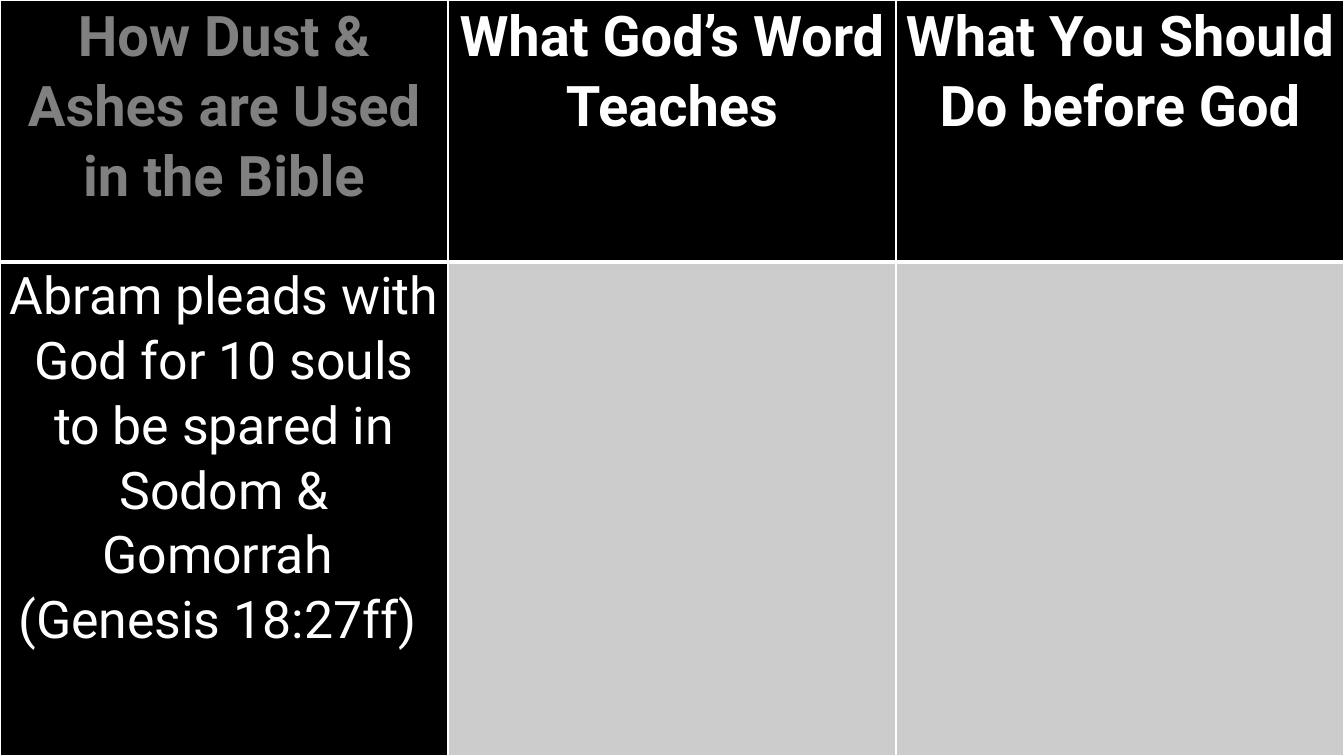
from dataclasses import dataclass

from lxml import etree
from pptx import Presentation
from pptx.dml.color import RGBColor
from pptx.enum.text import PP_ALIGN
from pptx.oxml.ns import qn
from pptx.util import Pt

CENTER = PP_ALIGN.CENTER
EMU_PER_INCH = 914400
PX_PER_INCH = 100.8
SLIDE_WIDTH, SLIDE_HEIGHT = 1344, 756
COLUMN_COUNT = 3
ROW_HEIGHTS = (262, 494)
SIDE_MARGIN = 7

HEADERS = (
    ["How Dust & Ashes are Used in the Bible"],
    ["What God’s Word ", "Teaches"],
    ["What You Should Do before God"],
)
EXAMPLE = [
    "Abram pleads with God for 10 souls to be spared in Sodom & Gomorrah ",
    "(Genesis 18:27ff) ",
]


@dataclass(frozen=True)
class Theme:
    """Colours, type sizes and line widths of the slide."""

    font: str = "Roboto"
    black: str = "000000"
    white: str = "FFFFFF"
    muted: str = "808080"
    empty: str = "CCCCCC"
    header_size: int = 40
    body_size: int = 37
    line_spacing: float = 1.07
    thin: int = 1
    thick: int = 3


THEME = Theme()


def px(length):
    """Turn pixels into EMU."""
    return round(length * EMU_PER_INCH / PX_PER_INCH)


def set_borders(cell, bottom_width):
    """Draw white lines on all four sides of a cell."""
    properties = cell._tc.get_or_add_tcPr()
    sides = ("a:lnL", "a:lnR", "a:lnT", "a:lnB")
    for index, side in enumerate(sides):
        width = bottom_width if side == "a:lnB" else THEME.thin
        line = etree.Element(qn(side), w=str(Pt(width)))
        fill = etree.SubElement(line, qn("a:solidFill"))
        etree.SubElement(fill, qn("a:srgbClr"), val=THEME.white)
        properties.insert(index, line)


def style_cell(cell, fill, bottom_width=THEME.thin):
    """Set the fill, margins and borders of a cell."""
    cell.fill.solid()
    cell.fill.fore_color.rgb = RGBColor.from_string(fill)
    cell.margin_left = cell.margin_right = px(SIDE_MARGIN)
    cell.margin_top = cell.margin_bottom = 0
    set_borders(cell, bottom_width)


def write_cell(cell, lines, size, color, bold):
    """Write centred paragraphs into a cell."""
    frame = cell.text_frame
    frame.text = "\n".join(lines)
    for paragraph in frame.paragraphs:
        paragraph.alignment = CENTER
        paragraph.line_spacing = THEME.line_spacing
        paragraph.font.name = THEME.font
        paragraph.font.size = Pt(size)
        paragraph.font.bold = bold
        paragraph.font.color.rgb = RGBColor.from_string(color)


def add_grid(slide):
    """Add the full-slide table with its row and column sizes."""
    table = slide.shapes.add_table(
        len(ROW_HEIGHTS), COLUMN_COUNT, 0, 0, px(SLIDE_WIDTH), px(SLIDE_HEIGHT)
    ).table
    table.first_row = table.horz_banding = False
    for row, height in zip(table.rows, ROW_HEIGHTS):
        row.height = px(height)
    return table


def main():
    """Build the slide and save it."""
    presentation = Presentation()
    presentation.slide_width = px(SLIDE_WIDTH)
    presentation.slide_height = px(SLIDE_HEIGHT)
    slide = presentation.slides.add_slide(presentation.slide_layouts[6])
    slide.background.fill.solid()
    slide.background.fill.fore_color.rgb = RGBColor.from_string(THEME.black)

    table = add_grid(slide)
    for column, lines in enumerate(HEADERS):
        header = table.cell(0, column)
        style_cell(header, THEME.black, THEME.thick)
        color = THEME.white if column else THEME.muted
        write_cell(header, lines, THEME.header_size, color, True)
        style_cell(table.cell(1, column), THEME.empty if column else THEME.black)
    write_cell(table.cell(1, 0), EXAMPLE, THEME.body_size, THEME.white, False)

    presentation.save("out.pptx")


if __name__ == "__main__":
    main()
